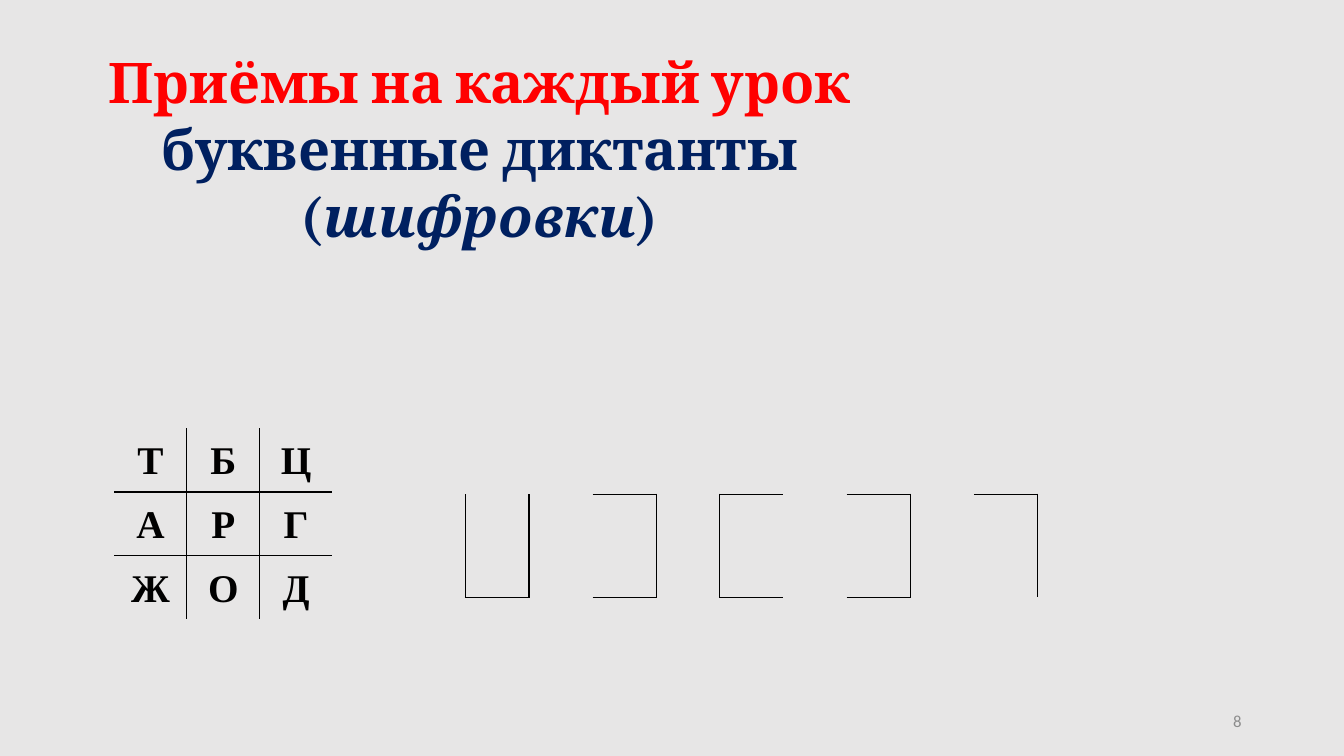
from dataclasses import dataclass

from lxml.etree import SubElement
from pptx import Presentation
from pptx.dml.color import RGBColor
from pptx.enum.text import MSO_ANCHOR as Anchor
from pptx.enum.text import MSO_AUTO_SIZE as AutoSize
from pptx.enum.text import PP_ALIGN as Align
from pptx.oxml.ns import qn
from pptx.util import Pt

BACKGROUND = RGBColor(0xE7, 0xE6, 0xE6)
BLACK = RGBColor(0x00, 0x00, 0x00)
RED = RGBColor(0xFF, 0x00, 0x00)
NAVY = RGBColor(0x00, 0x20, 0x60)
GRAY = RGBColor(0x8C, 0x8C, 0x8C)


@dataclass
class Cell:
    text: str
    sides: str  # any of L, R, T, B


@dataclass
class Grid:
    left: float
    top: float
    column_width: float
    row_height: float
    rows: list[list[Cell]]


def add_text(para, text: str, *, size: float, font: str, color: RGBColor,
             bold: bool = False, italic: bool = False) -> None:
    span = para.add_run()
    span.text = text
    span.font.size = Pt(size)
    span.font.name = font
    span.font.color.rgb = color
    span.font.bold = bold
    span.font.italic = italic


def set_borders(cell, sides: str) -> None:
    properties = cell._tc.get_or_add_tcPr()
    for index, side in enumerate("LRTB"):
        line = SubElement(properties, qn(f"a:ln{side}"), w=str(Pt(1)))
        if side in sides:
            fill = SubElement(line, qn("a:solidFill"))
            SubElement(fill, qn("a:srgbClr"), val=str(BLACK))
        else:
            SubElement(line, qn("a:noFill"))
        properties.insert(index, line)


def draw_grid(page, grid: Grid) -> None:
    row_count, column_count = len(grid.rows), len(grid.rows[0])
    table = page.shapes.add_table(
        row_count, column_count, Pt(grid.left), Pt(grid.top),
        Pt(grid.column_width * column_count),
        Pt(grid.row_height * row_count)).table
    table.first_row = table.horz_banding = False
    for column in table.columns:
        column.width = Pt(grid.column_width)
    for row, entries in zip(table.rows, grid.rows):
        row.height = Pt(grid.row_height)
        for cell, entry in zip(row.cells, entries):
            cell.fill.background()
            set_borders(cell, entry.sides)
            if entry.text:
                cell.vertical_anchor = Anchor.MIDDLE
                cell.margin_left = cell.margin_right = Pt(5)
                cell.margin_top = cell.margin_bottom = Pt(0)
                para = cell.text_frame.paragraphs[0]
                para.alignment = Align.CENTER
                para.line_spacing = 1.07
                add_text(para, entry.text, size=28, font="Times New Roman",
                         color=BLACK, bold=True)


def inner_sides(row: int, column: int) -> str:
    """Sides of a 3 by 3 grid cell that do not lie on the outer edge."""
    return (("L" if column > 0 else "") + ("R" if column < 2 else "")
            + ("T" if row > 0 else "") + ("B" if row < 2 else ""))


def draw_title(page) -> None:
    title = page.shapes.title
    title.left, title.top = Pt(19.4), Pt(30.2)
    title.width, title.height = Pt(646.6), Pt(200.9)
    frame = title.text_frame
    frame.word_wrap = True
    frame.auto_size = AutoSize.NONE
    frame.vertical_anchor = Anchor.TOP
    lines = [
        [("Приёмы на каждый урок", RED, False)],
        [("буквенные диктанты", NAVY, False)],
        [("(", NAVY, False), ("шифровки", NAVY, True), (")", NAVY, False)],
    ]
    for index, line in enumerate(lines):
        para = frame.add_paragraph() if index else frame.paragraphs[0]
        para.alignment = Align.CENTER
        para.line_spacing = 1.0
        para.space_before = Pt(0)
        for text, color, italic in line:
            add_text(para, text, size=40, font="Cambria", color=color,
                     bold=True, italic=italic)


def draw_page_number(page) -> None:
    box = page.shapes.add_textbox(Pt(678), Pt(500.5), Pt(216), Pt(28.8))
    frame = box.text_frame
    frame.word_wrap = True
    frame.vertical_anchor = Anchor.MIDDLE
    para = frame.paragraphs[0]
    para.alignment = Align.RIGHT
    add_text(para, "8", size=12, font="Calibri", color=GRAY)


def main() -> None:
    deck = Presentation()
    deck.slide_width, deck.slide_height = Pt(960), Pt(540)
    page = deck.slides.add_slide(deck.slide_layouts[5])
    page.background.fill.solid()
    page.background.fill.fore_color.rgb = BACKGROUND

    # Heading
    draw_title(page)

    # Key: letters in a grid open at its outer edge
    letters = ["ТБЦ", "АРГ", "ЖОД"]
    draw_grid(page, Grid(81.5, 306, 52, 45.4, [
        [Cell(letter, inner_sides(row, column))
         for column, letter in enumerate(line)]
        for row, line in enumerate(letters)]))

    # Cipher: each sign shows the sides of a key cell, with gaps between
    signs = ["LRB", "L", "TRB", "LR", "LTB", "", "TRB", "L", "TR", "L"]
    draw_grid(page, Grid(332.5, 353, 45.4, 73.6,
                         [[Cell("", sides) for sides in signs]]))

    # Footer
    draw_page_number(page)
    deck.save("out.pptx")


if __name__ == "__main__":
    main()
